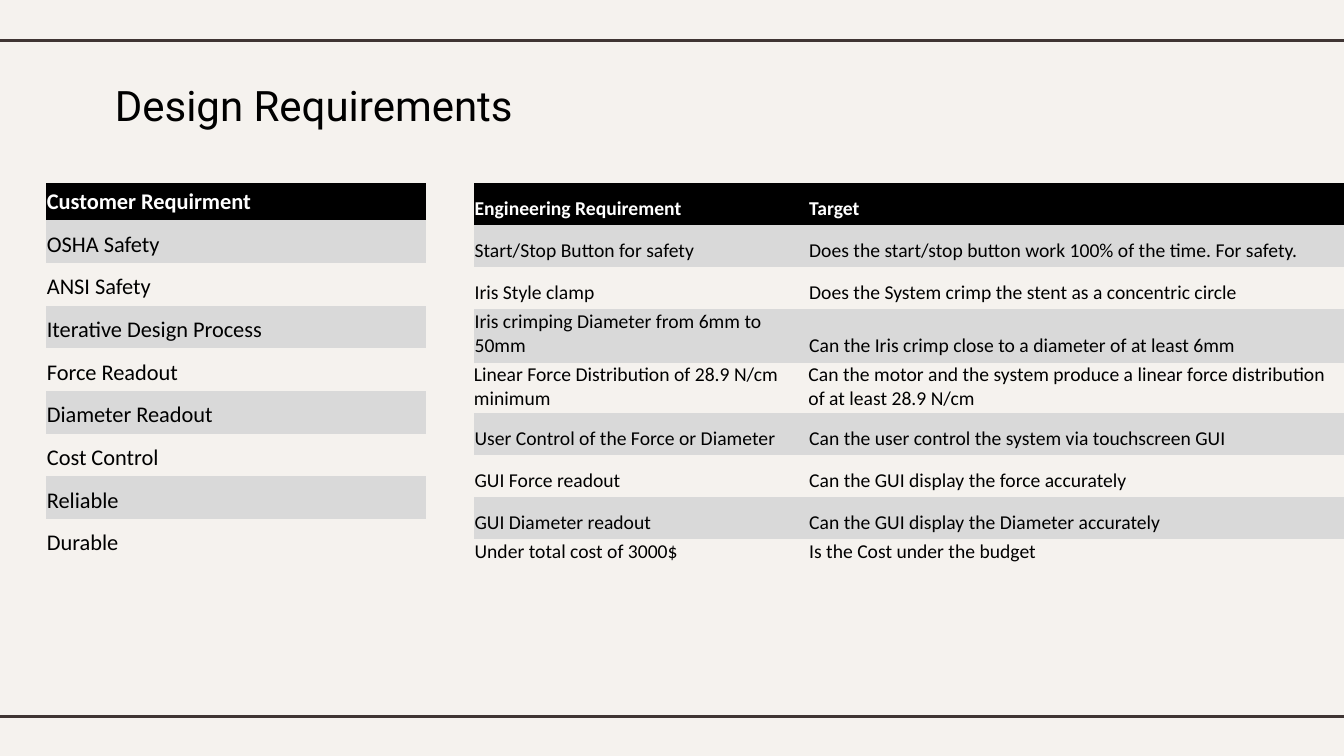
from lxml import etree
from pptx import Presentation
from pptx import util as u
from pptx.dml.color import RGBColor
from pptx.enum import shapes, text
from pptx.oxml.ns import qn

# Content
TITLE = "Design Requirements"
CUSTOMER_ROWS = [
    ("Customer Requirment",),
    ("OSHA Safety",),
    ("ANSI Safety",),
    ("Iterative Design Process",),
    ("Force Readout",),
    ("Diameter Readout",),
    ("Cost Control",),
    ("Reliable",),
    ("Durable",),
]
ENGINEERING_ROWS = [
    ("Engineering Requirement", "Target"),
    ("Start/Stop Button for safety",
     "Does the start/stop button work 100% of the time. For safety."),
    ("Iris Style clamp", "Does the System crimp the stent as a concentric circle"),
    ("Iris crimping Diameter from 6mm to 50mm",
     "Can the Iris crimp close to a diameter of at least 6mm"),
    ("Linear Force Distribution of 28.9 N/cm minimum",
     "Can the motor and the system produce a linear force distribution of at least 28.9 N/cm"),
    ("User Control of the Force or Diameter",
     "Can the user control the system via touchscreen GUI"),
    ("GUI Force readout", "Can the GUI display the force accurately"),
    ("GUI Diameter readout", "Can the GUI display the Diameter accurately"),
    ("Under total cost of 3000$", "Is the Cost under the budget"),
]

# Look
PAPER = RGBColor(0xF5, 0xF2, 0xEE)
RULE = RGBColor(0x3F, 0x35, 0x33)
BLACK = RGBColor(0, 0, 0)
WHITE = RGBColor(0xFF, 0xFF, 0xFF)
BAND = RGBColor(0xD9, 0xD9, 0xD9)
PLAIN_TABLE_STYLE = "{2D5ABB26-0587-4C30-8999-92F81FD0307C}"

# Lengths in px, 144 to the inch
PX = 6350
WIDTH, HEIGHT = 1920, 1080
OVERHANG = 16
RULE_TOPS = (58, 1024)
TABLE_TOP = 262
CUSTOMER = dict(left=66, columns=[543], heights=[53] + [61] * 8, size=16)
ENGINEERING = dict(left=677, columns=[478, 766], heights=[60] * 8 + [1],
                   size=14, tight_row=4)


def px(length):
    return u.Emu(length * PX)


def write(frame, content, *, font, size, color, bold=False, spacing=1.0):
    paragraph = frame.paragraphs[0]
    paragraph.alignment = text.PP_ALIGN.LEFT
    paragraph.line_spacing = spacing
    run = paragraph.add_run()
    run.text = content
    run.font.name = font
    run.font.size = u.Pt(size)
    run.font.bold = bold
    run.font.color.rgb = color


def add_rule(slide, top):
    line = slide.shapes.add_connector(
        shapes.MSO_CONNECTOR.STRAIGHT,
        px(-OVERHANG), px(top), px(WIDTH + OVERHANG), px(top))
    line.line.color.rgb = RULE
    line.line.width = u.Pt(2.25)
    properties = line._element.find(qn("p:spPr"))
    etree.SubElement(properties, qn("a:effectLst"))


def add_banded_table(slide, rows, *, left, columns, heights, size, tight_row=None):
    table = slide.shapes.add_table(
        len(rows), len(columns), px(left), px(TABLE_TOP),
        px(sum(columns)), px(sum(heights))).table
    table._tbl.tblPr.find(qn("a:tableStyleId")).text = PLAIN_TABLE_STYLE
    for column, width in zip(table.columns, columns):
        column.width = px(width)
    for index, (row, height) in enumerate(zip(rows, heights)):
        table.rows[index].height = px(height)
        header = index == 0
        side, bottom = (0, 4) if index == tight_row else (1, 7)
        for cell, content in zip(table.rows[index].cells, row):
            cell.vertical_anchor = text.MSO_ANCHOR.BOTTOM
            cell.margin_left = cell.margin_right = cell.margin_top = px(side)
            cell.margin_bottom = px(bottom)
            if header or index % 2:
                cell.fill.solid()
                cell.fill.fore_color.rgb = BLACK if header else BAND
            else:
                cell.fill.background()
            write(cell.text_frame, content, font="Calibri", size=size,
                  color=WHITE if header else BLACK, bold=header)


def main():
    presentation = Presentation()
    presentation.slide_width, presentation.slide_height = px(WIDTH), px(HEIGHT)
    slide = presentation.slides.add_slide(presentation.slide_layouts[5])
    slide.background.fill.solid()
    slide.background.fill.fore_color.rgb = PAPER

    # Rules at top and bottom
    for top in RULE_TOPS:
        add_rule(slide, top)

    # Title
    title = slide.shapes.title
    title.left, title.top, title.width, title.height = map(px, (150, 94, 670, 121))
    frame = title.text_frame
    frame.word_wrap = True
    frame.auto_size = text.MSO_AUTO_SIZE.NONE
    frame.vertical_anchor = text.MSO_ANCHOR.MIDDLE
    frame.margin_left = frame.margin_right = px(14)
    frame.margin_top = frame.margin_bottom = px(14)
    write(frame, TITLE, font="Roboto", size=30, color=BLACK, spacing=0.9)

    # Requirement tables
    add_banded_table(slide, ENGINEERING_ROWS, **ENGINEERING)
    add_banded_table(slide, CUSTOMER_ROWS, **CUSTOMER)

    presentation.save("out.pptx")


if __name__ == "__main__":
    main()
